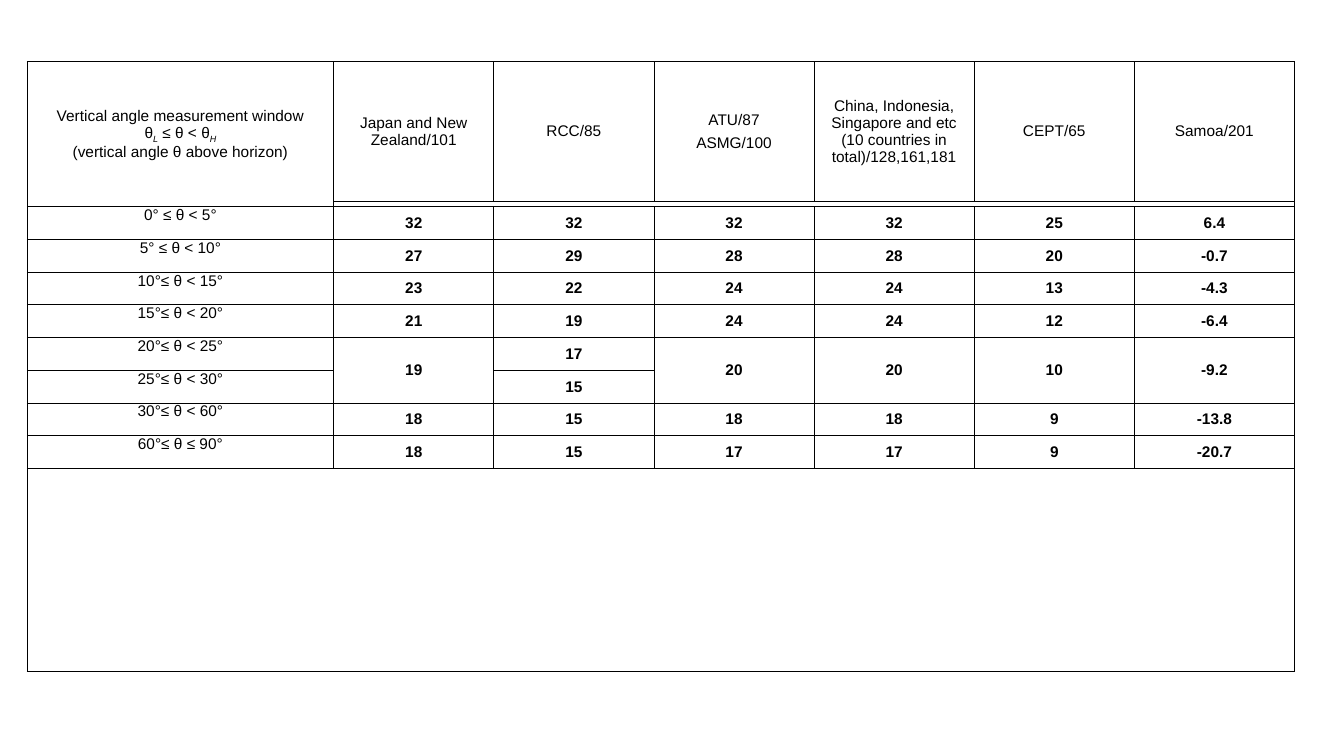
from lxml.etree import SubElement
from pptx import Presentation
from pptx.dml.color import RGBColor
from pptx.enum.text import MSO_ANCHOR, PP_ALIGN
from pptx.oxml.ns import qn
from pptx.util import Inches, Pt

BLACK = RGBColor(0, 0, 0)
LEFT, TOP = 0.27, 0.61
LABEL_WIDTH, VALUE_WIDTH = 3.04, 9.53 / 6
HEADER_HEIGHT, VALUE_HEIGHT, FOOTER_HEIGHT = 1.44, 2.6 / 8, 2.01
HEADING_HEIGHT = 1.39

ANGLE_HEADING = [
    ("Vertical angle measurement window", False), ("\n", False),
    ("θ", False), ("L", True), (" ≤ θ < θ", False), ("H", True), ("\n", False),
    ("(vertical angle θ above horizon)", False),
]
PROPOSALS = [
    ["Japan and New Zealand/101"],
    ["RCC/85"],
    ["ATU/87", "ASMG/100"],
    ["China, Indonesia, Singapore and etc (10 countries in total)/128,161,181"],
    ["CEPT/65"],
    ["Samoa/201"],
]
# None continues the cell above
LIMITS = [
    ("0° ≤ θ < 5°", "32", "32", "32", "32", "25", "6.4"),
    ("5° ≤ θ < 10°", "27", "29", "28", "28", "20", "-0.7"),
    ("10°≤ θ < 15°", "23", "22", "24", "24", "13", "-4.3"),
    ("15°≤ θ < 20°", "21", "19", "24", "24", "12", "-6.4"),
    ("20°≤ θ < 25°", "19", "17", "20", "20", "10", "-9.2"),
    ("25°≤ θ < 30°", None, "15", None, None, None, None),
    ("30°≤ θ < 60°", "18", "15", "18", "18", "9", "-13.8"),
    ("60°≤ θ ≤ 90°", "18", "15", "17", "17", "9", "-20.7"),
]


def add_ruled_table(slide, left, widths, heights):
    """Add an unfilled table at the common top, with black rules around every cell."""
    table = slide.shapes.add_table(
        len(heights), len(widths), Inches(left), Inches(TOP),
        Inches(sum(widths)), Inches(sum(heights))).table
    table.first_row = table.horz_banding = False
    for column, width in zip(table.columns, widths):
        column.width = Inches(width)
    for row, height in zip(table.rows, heights):
        row.height = Inches(height)
    for cell in table.iter_cells():
        cell.margin_left = cell.margin_right = Inches(0.07)
        cell.margin_top = cell.margin_bottom = 0
        properties = cell._tc.get_or_add_tcPr()
        for side in ("a:lnL", "a:lnR", "a:lnT", "a:lnB"):
            line = SubElement(properties, qn(side), w=str(Pt(0.75)))
            fill = SubElement(line, qn("a:solidFill"))
            SubElement(fill, qn("a:srgbClr"), val=str(BLACK))
        cell.fill.background()
    return table


def write(cell, paragraphs, bold=False, after=2, anchor=MSO_ANCHOR.MIDDLE):
    """Fill a cell with paragraphs, each a list of (text, is subscript) runs."""
    cell.vertical_anchor = anchor
    for index, runs in enumerate(paragraphs):
        frame = cell.text_frame
        paragraph = frame.add_paragraph() if index else frame.paragraphs[0]
        paragraph.alignment = PP_ALIGN.CENTER
        paragraph.space_before = Pt(0)
        paragraph.space_after = Pt(after)
        for text, subscript in runs:
            if text == "\n":
                paragraph.add_line_break()
                continue
            run = paragraph.add_run()
            run.text = text
            run.font.name = "Arial"
            run.font.size = Pt(11)
            run.font.bold = bold
            run.font.color.rgb = BLACK
            if subscript:
                run.font.italic = True
                run._r.get_or_add_rPr().set("baseline", "-25000")


presentation = Presentation()
presentation.slide_width = Inches(13.33)
presentation.slide_height = Inches(7.5)
slide = presentation.slides.add_slide(presentation.slide_layouts[6])

limits = add_ruled_table(
    slide, LEFT, [LABEL_WIDTH] + [VALUE_WIDTH] * 6,
    [HEADER_HEIGHT] + [VALUE_HEIGHT] * len(LIMITS) + [FOOTER_HEIGHT])
write(limits.cell(0, 0), [ANGLE_HEADING], after=4)
limits.cell(0, 1).merge(limits.cell(0, 6))
footer_row = len(LIMITS) + 1
limits.cell(footer_row, 0).merge(limits.cell(footer_row, 6))

for row, values in enumerate(LIMITS, start=1):
    for column, value in enumerate(values):
        cell = limits.cell(row, column)
        if value is None:
            limits.cell(row - 1, column).merge(cell)
        elif column == 0:
            write(cell, [[(value, False)]], anchor=MSO_ANCHOR.TOP)
        else:
            write(cell, [[(value, False)]], bold=True)

headings = add_ruled_table(
    slide, LEFT + LABEL_WIDTH, [VALUE_WIDTH] * len(PROPOSALS), [HEADING_HEIGHT])
for column, names in enumerate(PROPOSALS):
    write(headings.cell(0, column), [[(name, False)] for name in names], after=4)

presentation.save("out.pptx")
